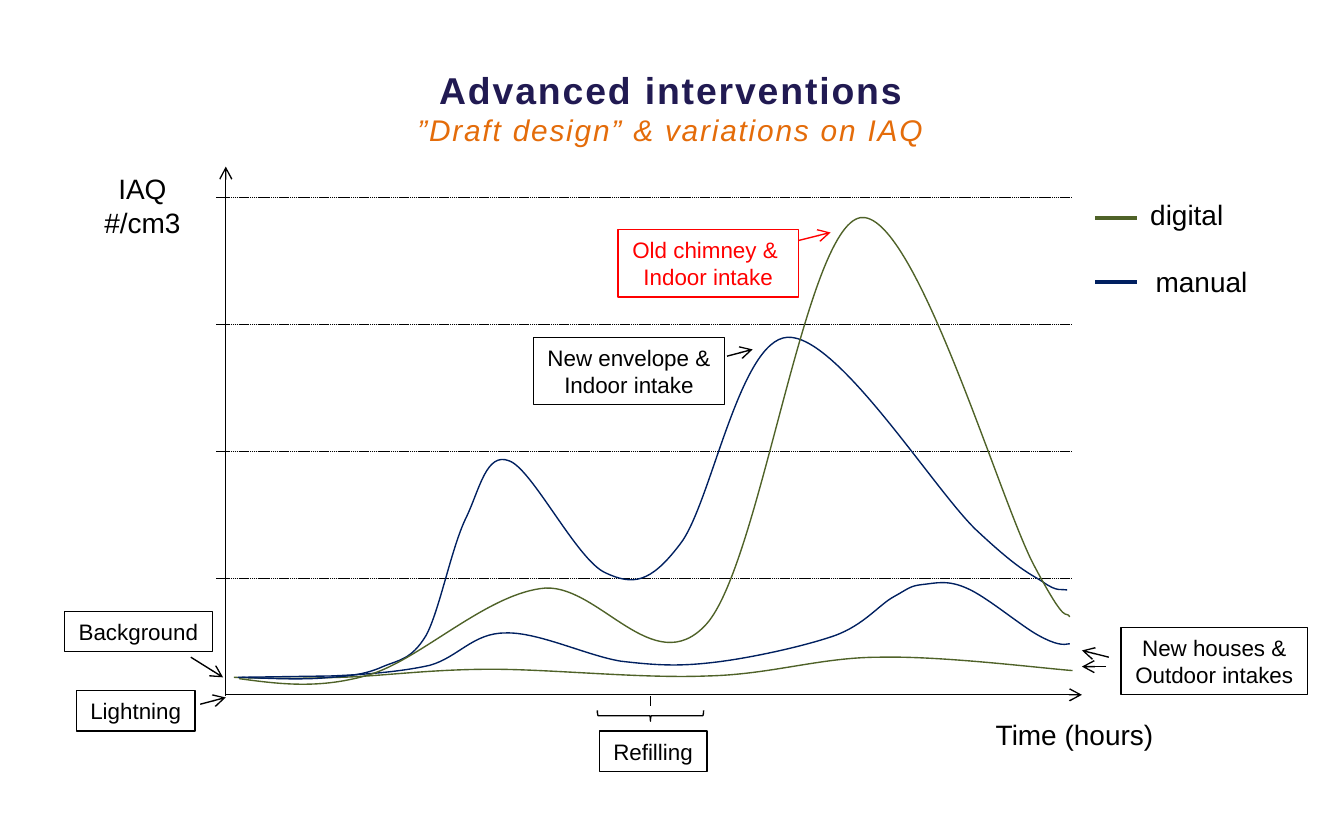
from dataclasses import dataclass
from typing import NamedTuple

from lxml.etree import SubElement
from pptx import Presentation
from pptx.dml.color import RGBColor
from pptx.enum.dml import MSO_LINE
from pptx.enum.shapes import MSO_CONNECTOR, MSO_SHAPE
from pptx.enum.text import MSO_ANCHOR, MSO_AUTO_SIZE, PP_ALIGN
from pptx.oxml.ns import qn
from pptx.util import Inches, Pt


@dataclass(frozen=True)
class Theme:
    font: str = "Arial"
    black: str = "000000"
    red: str = "FF0000"
    digital: str = "4F6228"
    manual: str = "002060"
    title: str = "211A52"
    subtitle: str = "E46C0A"
    title_size: int = 20
    subtitle_size: int = 16
    label_size: int = 15
    callout_size: int = 12
    line: float = 0.75
    grid_line: float = 0.25
    legend_line: float = 2


THEME = Theme()


class Box(NamedTuple):
    left: float
    top: float
    width: float
    height: float


class Label(NamedTuple):
    box: Box
    lines: tuple[str, ...]
    color: str = THEME.black
    align: PP_ALIGN = PP_ALIGN.CENTER


class Arrow(NamedTuple):
    start: tuple[float, float]
    end: tuple[float, float]
    color: str = THEME.black


class Curve(NamedTuple):
    color: str
    box: Box
    start: tuple[float, float]
    # Two control points and an end point per bend
    bends: tuple[tuple[float, float], ...]
    # End of a straight first stretch
    straight: tuple[tuple[float, float], ...] = ()


CALLOUTS = (
    Label(Box(3.97, 2.51, 1.42, 0.5), ("New envelope &", "Indoor intake")),
    Label(Box(8.34, 4.67, 1.39, 0.5), ("New houses &", "Outdoor intakes")),
    Label(Box(4.6, 1.71, 1.34, 0.5), ("Old chimney & ", "Indoor intake"), THEME.red),
    Label(Box(0.57, 5.14, 0.88, 0.3), ("Lightning",)),
    Label(Box(4.46, 5.44, 0.8, 0.3), ("Refilling",)),
    Label(Box(0.48, 4.55, 1.1, 0.3), ("Background",)),
)
LABELS = (
    Label(Box(8.46, 1.42, 0.75, 0.35), ("digital",), align=PP_ALIGN.LEFT),
    Label(Box(8.5, 1.92, 0.89, 0.35), ("manual",), align=PP_ALIGN.LEFT),
    Label(Box(0.67, 1.23, 0.78, 0.61), ("IAQ", "#/cm3")),
    Label(Box(7.3, 5.29, 1.39, 0.35), ("Time (hours)",)),
)
ARROWS = (
    Arrow((1.68, 5.18), (1.68, 1.24)),  # IAQ axis
    Arrow((1.68, 5.17), (8.05, 5.17)),  # time axis
    Arrow((5.41, 2.65), (5.6, 2.6)),
    Arrow((8.25, 4.89), (8.05, 4.84)),
    Arrow((8.23, 4.96), (8.05, 4.96)),
    Arrow((5.94, 1.79), (6.18, 1.73), THEME.red),
    Arrow((1.49, 5.24), (1.68, 5.19)),
    Arrow((1.42, 4.89), (1.66, 5.04)),
)
CURVES = (
    # New houses, outdoor intakes
    Curve(THEME.digital, Box(1.74, 4.89, 6.24, 0.16), (1.74, 5.04), (
        (1.98, 5.05), (2.22, 5.05), (2.54, 5.04), (2.86, 5.03), (3.2, 4.98), (3.66, 4.98),
        (4.11, 4.98), (4.78, 5.05), (5.26, 5.03), (5.74, 5.02), (6.1, 4.89), (6.55, 4.89),
        (7.01, 4.88), (7.73, 4.97), (7.98, 4.99))),
    Curve(THEME.manual, Box(1.77, 4.34, 6.19, 0.7), (1.77, 5.04), (
        (2.7, 5.02), (2.98, 5), (3.2, 4.95), (3.41, 4.89), (3.52, 4.71), (3.76, 4.71),
        (4, 4.7), (4.37, 4.88), (4.62, 4.92), (4.88, 4.95), (5.04, 4.96), (5.3, 4.93),
        (5.57, 4.9), (5.98, 4.81), (6.21, 4.73), (6.43, 4.65), (6.54, 4.5), (6.65, 4.44),
        (6.76, 4.38), (6.77, 4.36), (6.86, 4.35), (6.96, 4.34), (7.05, 4.31), (7.2, 4.38),
        (7.34, 4.44), (7.6, 4.66), (7.73, 4.73), (7.86, 4.8), (7.91, 4.8), (7.96, 4.79)),
        straight=((2.46, 5.03),)),
    # New envelope, indoor intake
    Curve(THEME.manual, Box(1.8, 2.51, 6.14, 2.54), (1.8, 5.04), (
        (2.04, 5.05), (2.28, 5.06), (2.46, 5.04), (2.63, 5.03), (2.74, 5.01), (2.85, 4.96),
        (2.97, 4.91), (3.06, 4.91), (3.17, 4.73), (3.27, 4.55), (3.36, 4.07), (3.47, 3.85),
        (3.57, 3.64), (3.62, 3.36), (3.79, 3.43), (3.96, 3.49), (4.29, 4.16), (4.5, 4.26),
        (4.71, 4.36), (4.84, 4.34), (5.06, 4.05), (5.29, 3.76), (5.5, 2.53), (5.86, 2.51),
        (6.23, 2.49), (6.94, 3.63), (7.26, 3.94), (7.58, 4.24), (7.65, 4.26), (7.76, 4.33),
        (7.87, 4.41), (7.9, 4.38), (7.94, 4.39))),
    # Old chimney, indoor intake
    Curve(THEME.digital, Box(1.78, 1.62, 6.18, 3.47), (1.78, 5.05), (
        (2.08, 5.09), (2.38, 5.13), (2.75, 5.02), (3.12, 4.91), (3.6, 4.44), (4.02, 4.38),
        (4.44, 4.31), (4.86, 5.09), (5.26, 4.64), (5.66, 4.18), (5.99, 1.7), (6.4, 1.62),
        (6.8, 1.55), (7.43, 3.7), (7.69, 4.2), (7.95, 4.69), (7.92, 4.53), (7.96, 4.59))),
)


def place(shape, box: Box) -> None:
    for name, value in box._asdict().items():
        setattr(shape, name, Inches(value))


def style_line(line, color: str, width: float) -> None:
    line.color.rgb = RGBColor.from_string(color)
    line.width = Pt(width)


def style_shape(shape, color: str) -> None:
    shape.shadow.inherit = False
    shape.fill.background()
    style_line(shape.line, color, THEME.line)


def style_run(run, color: str, **formats) -> None:
    run.font.color.rgb = RGBColor.from_string(color)
    for name, value in {"name": THEME.font, **formats}.items():
        setattr(run.font, name, value)


def draw_line(slide, start, end, color=THEME.black, width=THEME.line):
    ends = [Inches(value) for value in (*start, *end)]
    connector = slide.shapes.add_connector(MSO_CONNECTOR.STRAIGHT, *ends)
    style_line(connector.line, color, width)
    SubElement(connector._element.spPr, qn("a:effectLst"))
    return connector


def draw_arrow(slide, arrow: Arrow) -> None:
    connector = draw_line(slide, *arrow)
    SubElement(connector.line._get_or_add_ln(), qn("a:tailEnd"), type="arrow")


def draw_curve(slide, curve: Curve) -> None:
    builder = slide.shapes.build_freeform(*map(Inches, curve.start))
    builder.add_line_segments([tuple(map(Inches, end)) for end in curve.bends[2::3]], close=False)
    shape = builder.convert_to_shape()
    place(shape, curve.box)
    style_shape(shape, curve.color)

    # Turn the straight stretches into Bézier bends inside the curve's box
    outline = shape._element.find(".//" + qn("a:path"))
    for stretch in list(outline):
        outline.remove(stretch)
    outline.set("w", str(Inches(curve.box.width)))
    outline.set("h", str(Inches(curve.box.height)))
    bends = [curve.bends[i:i + 3] for i in range(0, len(curve.bends), 3)]
    stretches = [("a:moveTo", (curve.start,))]
    stretches += [("a:lnTo", (end,)) for end in curve.straight]
    stretches += [("a:cubicBezTo", bend) for bend in bends]
    for tag, points in stretches:
        stretch = SubElement(outline, qn(tag))
        for x, y in points:
            SubElement(stretch, qn("a:pt"), x=str(Inches(x - curve.box.left)),
                       y=str(Inches(y - curve.box.top)))


def write_label(frame, label: Label, size: int) -> None:
    frame.word_wrap = False
    frame.auto_size = MSO_AUTO_SIZE.SHAPE_TO_FIT_TEXT
    frame.text = "\n".join(label.lines)
    for paragraph in frame.paragraphs:
        paragraph.alignment = label.align
        style_run(paragraph.runs[0], label.color, size=Pt(size))


def draw_label(slide, label: Label) -> None:
    text = slide.shapes.add_textbox(*map(Inches, label.box))
    write_label(text.text_frame, label, THEME.label_size)


def draw_callout(slide, label: Label) -> None:
    callout = slide.shapes.add_shape(MSO_SHAPE.RECTANGLE, *map(Inches, label.box))
    style_shape(callout, label.color)
    write_label(callout.text_frame, label, THEME.callout_size)


def write_title(slide) -> None:
    title = slide.shapes.title
    place(title, Box(0.49, 0.11, 9, 1.04))
    frame = title.text_frame
    frame.text = "Advanced interventions\n”Draft design” & variations on IAQ"
    frame.auto_size = MSO_AUTO_SIZE.NONE
    frame.vertical_anchor = MSO_ANCHOR.BOTTOM
    formats = (
        {"color": THEME.title, "size": Pt(THEME.title_size), "bold": True},
        {"color": THEME.subtitle, "size": Pt(THEME.subtitle_size), "italic": True},
    )
    for paragraph, style in zip(frame.paragraphs, formats):
        paragraph.alignment = PP_ALIGN.CENTER
        style_run(paragraph.runs[0], **style)
        paragraph.runs[0]._r.get_or_add_rPr().set("spc", "100")


def main() -> None:
    deck = Presentation()
    deck.slide_width, deck.slide_height = Inches(10), Inches(6.25)
    slide = deck.slides.add_slide(deck.slide_layouts[5])
    write_title(slide)

    # Ticks and grid lines at equal steps
    for level in range(4):
        y = 1.47 + level * 0.945
        draw_line(slide, (1.61, y), (1.7, y))
        grid = draw_line(slide, (1.69, y), (7.97, y), width=THEME.grid_line)
        grid.line.dash_style = MSO_LINE.SQUARE_DOT
    # Axes, pointers and curves
    for arrow in ARROWS:
        draw_arrow(slide, arrow)
    for curve in CURVES:
        draw_curve(slide, curve)
    # Legend keys
    for y, color in ((1.62, THEME.digital), (2.1, THEME.manual)):
        draw_line(slide, (8.15, y), (8.46, y), color, THEME.legend_line)
    # Refilling mark below the time axis
    draw_line(slide, (4.84, 5.25), (4.84, 5.18))
    brace = slide.shapes.add_shape(MSO_SHAPE.LEFT_BRACE, *map(Inches, Box(4.8, 4.93, 0.08, 0.79)))
    brace.rotation = 270
    style_shape(brace, THEME.black)
    # Texts
    for label in LABELS:
        draw_label(slide, label)
    for callout in CALLOUTS:
        draw_callout(slide, callout)
    deck.save("out.pptx")


if __name__ == "__main__":
    main()
